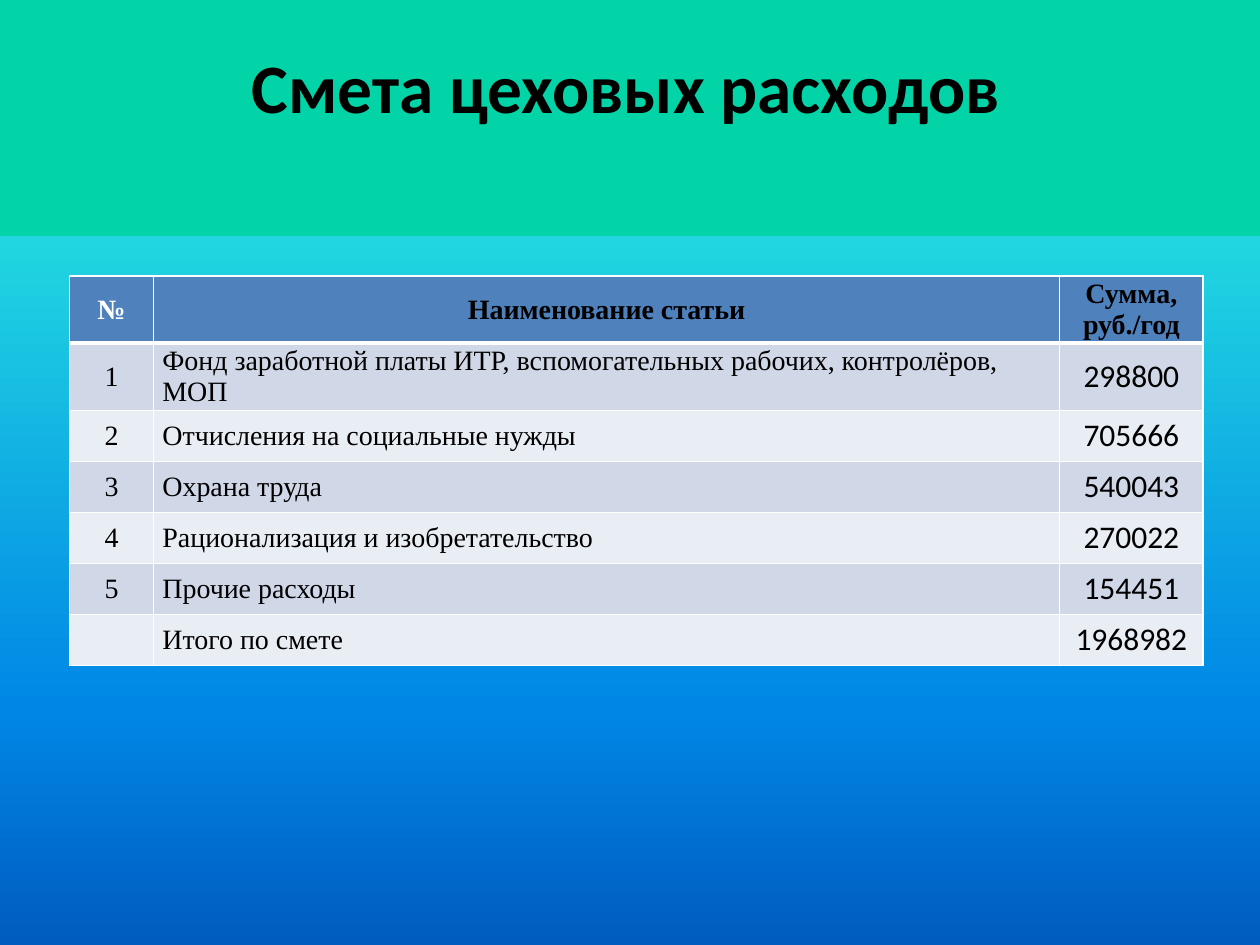
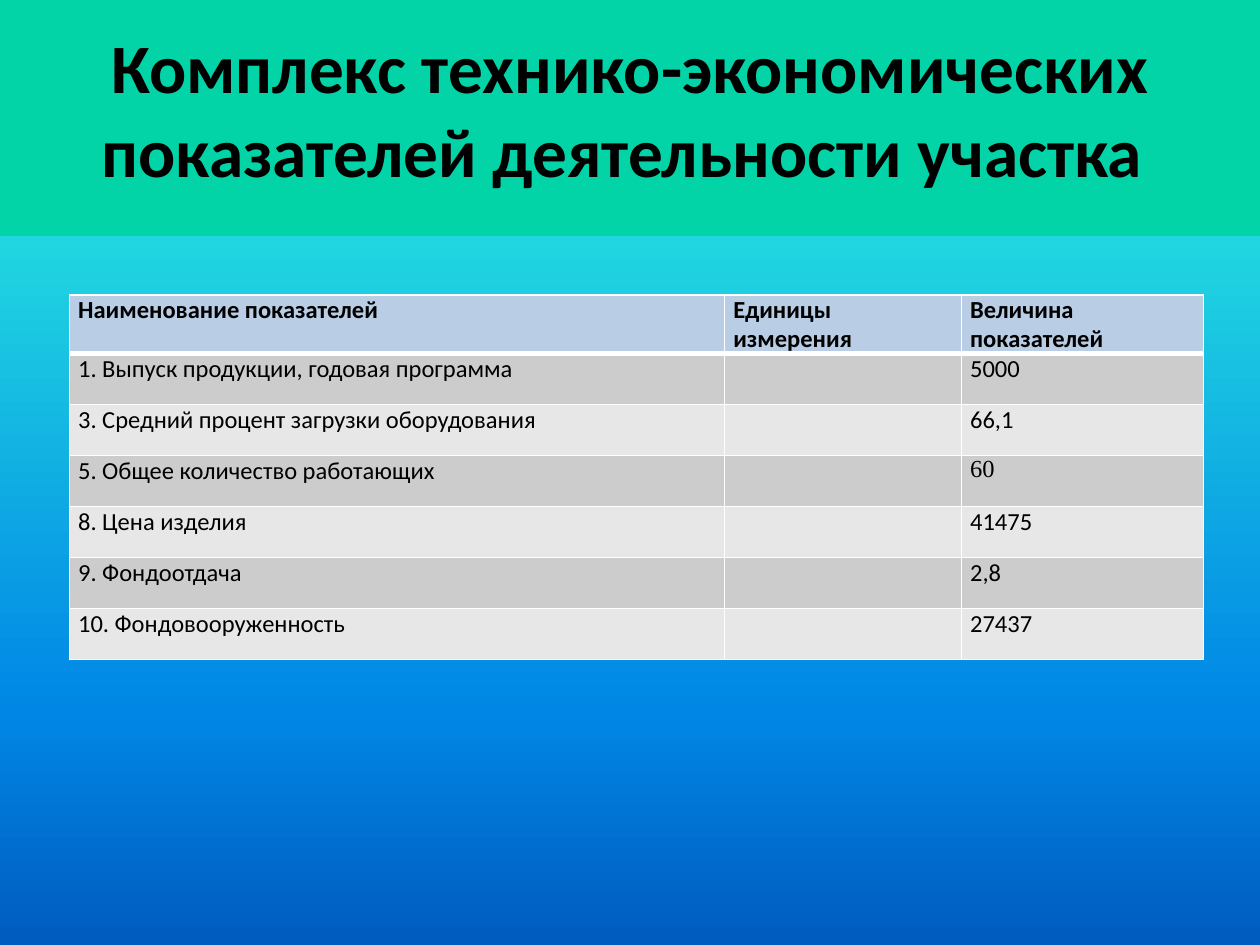
import pptx
import pptx.util
import pptx.dml.color
import pptx.enum.text
import pptx.oxml
import pptx.oxml.ns

In = pptx.util.Inches
Pt = pptx.util.Pt
ALIGN = pptx.enum.text.PP_ALIGN
ANCHOR = pptx.enum.text.MSO_ANCHOR
NS = pptx.oxml.ns.nsdecls("a", "p")
SANS, SERIF = "Calibri", "Times New Roman"
BLACK, WHITE = "000000", "FFFFFF"
STOPS = [(25, "03D4A8"), (25, "21D6E0"), (75, "0087E6"), (100, "005CBF")]


def rgb(value):
    return pptx.dml.color.RGBColor.from_string(value)


def style(p, size, font, color, bold, align):
    p.alignment = align
    for r in p.runs:
        r.font.size = Pt(size)
        r.font.name = font
        r.font.bold = bold
        r.font.color.rgb = rgb(color)


prs = pptx.Presentation()
prs.slide_width, prs.slide_height = In(10), In(7.5)
W, H = prs.slide_width, prs.slide_height
row_height = int(H * 0.054)
table_left = int(W * 0.055)
title_line = In(0.67)

slides = [
    dict(
        title="Смета цеховых расходов", title_at=(0.47, 0.39, 9, 1.25), table_top=2.19,
        cols=[0.67, 7.19, 1.14], aligns=[ALIGN.CENTER, ALIGN.LEFT, ALIGN.CENTER],
        fonts=[(16, SERIF), (16, SERIF), (18, SANS)], header_font=(16, SERIF),
        header_align=ALIGN.CENTER, anchor=ANCHOR.MIDDLE,
        fills=["4F81BD", "D0D8E8", "E9EDF4"], special_colors={"№": WHITE}, special_fonts={},
        rows=[
            ("№", "Наименование статьи", "Сумма, руб./год"),
            ("1", "Фонд заработной платы ИТР, вспомогательных рабочих, контролёров, МОП", "298800"),
            ("2", "Отчисления на социальные нужды", "705666"),
            ("3", "Охрана труда", "540043"),
            ("4", "Рационализация и изобретательство", "270022"),
            ("5", "Прочие расходы", "154451"),
            ("", "Итого по смете", "1968982"),
        ],
    ),
    dict(
        title="Комплекс технико-экономических показателей деятельности участка ",
        title_at=(0.5, 0.55, 9, 1.28), table_top=2.34,
        cols=[5.2, 1.88, 1.92], aligns=[ALIGN.LEFT] * 3,
        fonts=[(14, SANS)] * 3, header_font=(14, SANS),
        header_align=ALIGN.LEFT, anchor=ANCHOR.TOP,
        fills=["B9CDE5", "CCCCCC", "E7E7E7"], special_colors={}, special_fonts={"60": SERIF},
        rows=[
            ("Наименование показателей", "Единицы измерения", "Величина показателей"),
            ("1. Выпуск продукции, годовая программа", "", "5000"),
            ("3. Средний процент загрузки оборудования", "", "66,1"),
            ("5. Общее количество работающих", "", "60"),
            ("8. Цена изделия", "", "41475"),
            ("9. Фондоотдача", "", "2,8"),
            ("10. Фондовооруженность", "", "27437"),
        ],
    ),
]

for d in slides:
    s = prs.slides.add_slide(prs.slide_layouts[6])
    stops = "".join(
        f'<a:gs pos="{pos * 1000}"><a:srgbClr val="{color}"/></a:gs>' for pos, color in STOPS
    )
    s.element.cSld.insert(0, pptx.oxml.parse_xml(
        f'<p:bg {NS}><p:bgPr><a:gradFill rotWithShape="1"><a:gsLst>{stops}</a:gsLst>'
        '<a:lin ang="5400000" scaled="0"/></a:gradFill><a:effectLst/></p:bgPr></p:bg>'
    ))

    tf = s.shapes.add_textbox(*[In(v) for v in d["title_at"]]).text_frame
    tf.word_wrap = True
    tf.vertical_anchor = ANCHOR.MIDDLE
    tf.margin_top, tf.margin_bottom = 0, title_line
    tf.text = d["title"]
    style(tf.paragraphs[0], 39.6, SANS, BLACK, True, ALIGN.CENTER)

    n = len(d["rows"])
    table = s.shapes.add_table(
        n, len(d["cols"]), table_left, In(d["table_top"]), In(sum(d["cols"])), row_height * n
    ).table
    table.horz_banding = False
    for col, width in zip(table.columns, d["cols"]):
        col.width = In(width)

    for i, texts in enumerate(d["rows"]):
        table.rows[i].height = row_height
        header = i == 0
        for j, text in enumerate(texts):
            cell = table.cell(i, j)
            cell.fill.solid()
            cell.fill.fore_color.rgb = rgb(d["fills"][0 if header else 2 - i % 2])
            widths = {"L": 1, "R": 1, "T": 3 if i == 1 else 1, "B": 3 if header else 1}
            tcPr = cell._tc.get_or_add_tcPr()
            for k, (side, width) in enumerate(widths.items()):
                tcPr.insert(k, pptx.oxml.parse_xml(
                    f'<a:ln{side} {NS} w="{Pt(width)}"><a:solidFill><a:srgbClr val="{WHITE}"/>'
                    f'</a:solidFill></a:ln{side}>'
                ))
            if not text:
                continue
            cell.vertical_anchor = d["anchor"]
            cell.margin_left = cell.margin_right = In(0.07)
            cell.margin_top = cell.margin_bottom = 0
            cell.text = text
            size, font = d["header_font"] if header else d["fonts"][j]
            style(
                cell.text_frame.paragraphs[0], size, d["special_fonts"].get(text, font),
                d["special_colors"].get(text, BLACK), header,
                d["header_align"] if header else d["aligns"][j],
            )

prs.save("out.pptx")
